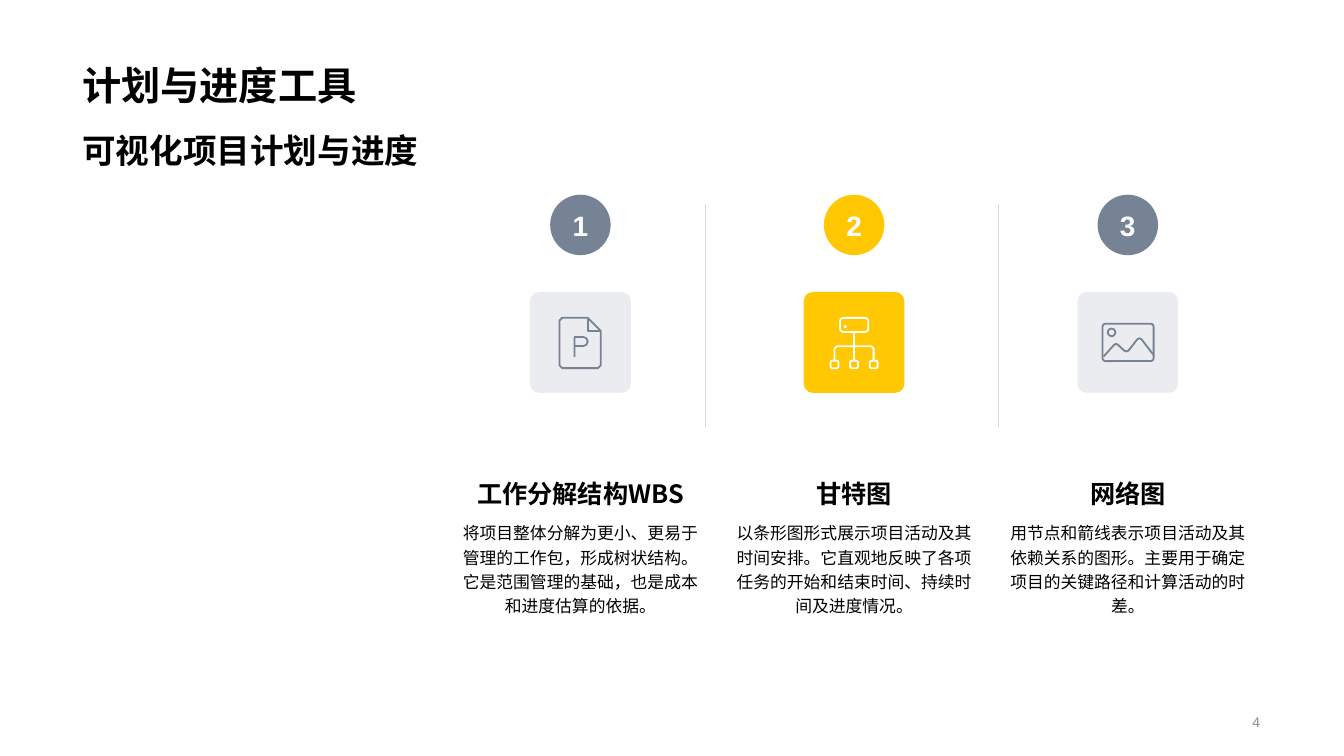
from lxml import etree
from pptx import Presentation
from pptx.dml.color import RGBColor
from pptx.enum import shapes, text
from pptx.oxml.ns import qn
from pptx.util import Pt

CJK, LATIN = "Noto Sans CJK SC", "Arial"
BLACK, WHITE, SLATE, YELLOW = "000000", "FFFFFF", "768394", "FFC803"
SHAPE, ANCHOR, ALIGN = shapes.MSO_SHAPE, text.MSO_ANCHOR, text.PP_ALIGN


def color(value):
    return RGBColor.from_string(value)


class Deck:
    """Current slide and its style; all lengths are points."""

    icon_line = 1.3

    def __init__(self, width, height):
        self.prs = Presentation()
        self.prs.slide_width, self.prs.slide_height = Pt(width), Pt(height)
        self.s = self.prs.slides.add_slide(self.prs.slide_layouts[6])

    def label(self, sp, content, size, c=BLACK, bold=False, font=CJK,
              align=ALIGN.LEFT, anchor=ANCHOR.TOP, spacing=None, wrap=True):
        """Fill a shape with one styled paragraph."""
        tf = sp.text_frame
        tf.word_wrap, tf.vertical_anchor = wrap, anchor
        p = tf.paragraphs[0]
        p.text, p.alignment = content, align
        if spacing:
            p.line_spacing = Pt(spacing * size)
        p.font.name, p.font.size, p.font.bold = font, Pt(size), bold
        p.font.color.rgb = color(c)
        ea = etree.SubElement(p._p.pPr.find(qn("a:defRPr")), qn("a:ea"))
        ea.set("typeface", font)

    def text(self, content, x, y, w, h, size, **style):
        sp = self.s.shapes.add_textbox(Pt(x), Pt(y), Pt(w), Pt(h))
        self.label(sp, content, size, **style)

    def paint(self, sp, fill=None, line=None, alpha=None):
        sp.shadow.inherit = False
        if fill:
            sp.fill.solid()
            sp.fill.fore_color.rgb = color(fill)
        else:
            sp.fill.background()
        if alpha:
            clr = sp._element.spPr.find(qn("a:solidFill"))[0]
            etree.SubElement(clr, qn("a:alpha")).set("val", str(alpha * 1000))
        if line:
            sp.line.color.rgb, sp.line.width = color(line), Pt(self.icon_line)
        else:
            sp.line.fill.background()

    def shape(self, kind, cx, cy, w, h, radius=None, **look):
        """Preset shape placed by its centre."""
        sp = self.s.shapes.add_shape(kind, Pt(cx - w / 2), Pt(cy - h / 2), Pt(w), Pt(h))
        if radius is not None:
            sp.adjustments[0] = radius
        self.paint(sp, **look)
        return sp

    def stroke(self, cx, cy, points, c, close=False):
        """Unfilled outline through points given from a centre."""
        pts = [(Pt(cx + x), Pt(cy + y)) for x, y in points]
        fb = self.s.shapes.build_freeform(*pts[0])
        fb.add_line_segments(pts[1:], close=close)
        self.paint(fb.convert_to_shape(), line=c)

    def divider(self, x, top, bottom):
        ln = self.s.shapes.add_connector(
            shapes.MSO_CONNECTOR.STRAIGHT, Pt(x), Pt(top), Pt(x), Pt(bottom))
        ln.line.color.rgb, ln.line.width = color("D9D9D9"), Pt(0.25)
        etree.SubElement(ln._element.spPr, qn("a:effectLst"))


def document_icon(d, cx, cy, c):
    page = [(-13, -17.6), (5.2, -17.6), (14.5, -8.2), (14.5, 16.4), (12.5, 18.4),
            (-13, 18.4), (-15, 16.4), (-15, -15.6)]
    fold = [(5.2, -17.6), (5.2, -8.2), (14.5, -8.2)]
    letter = [(-4.2, 10.5), (-4.2, -3.9), (2, -3.9), (4.3, -2.9), (5.2, -0.6),
              (4.3, 1.7), (2, 2.6), (-4.2, 2.6)]
    d.stroke(cx, cy, page, c, close=True)
    d.stroke(cx, cy, fold, c)
    d.stroke(cx, cy, letter, c)


def tree_icon(d, cx, cy, c):
    d.shape(SHAPE.ROUNDED_RECTANGLE, cx, cy - 12.5, 20.2, 10.1, radius=0.25, line=c)
    d.shape(SHAPE.OVAL, cx - 6.3, cy - 11.3, 2, 2, fill=c)
    d.stroke(cx, cy, [(0, -7.5), (0, 13)], c)
    d.stroke(cx, cy, [(-14, 13), (-14, 4.5), (-12.4, 2.8), (12.4, 2.8),
                      (14, 4.5), (14, 13)], c)
    for dx in (-14, 0, 14):
        d.shape(SHAPE.ROUNDED_RECTANGLE, cx + dx, cy + 15.7, 5.6, 5.4,
                radius=0.25, line=c)


def landscape_icon(d, cx, cy, c):
    ridge = [(-17.3, 10.1), (-9.8, 1.8), (-8.3, 1), (-6.9, 1.8), (-2.6, 5.8),
             (-1, 6.5), (0.6, 5.8), (6.7, -2.1), (8.3, -3), (9.9, -2.1), (18.2, 8.7)]
    d.shape(SHAPE.ROUNDED_RECTANGLE, cx + 0.2, cy, 36.5, 26.7, radius=0.08, line=c)
    d.shape(SHAPE.OVAL, cx - 11.6, cy - 7.2, 5.4, 5.4, line=c)
    d.stroke(cx, cy, ridge, c)


TOOLS = [
    ("工作分解结构WBS", "将项目整体分解为更小、更易于管理的工作包，形成树状结构。"
     "它是范围管理的基础，也是成本和进度估算的依据。", document_icon),
    ("甘特图", "以条形图形式展示项目活动及其时间安排。"
     "它直观地反映了各项任务的开始和结束时间、持续时间及进度情况。", tree_icon),
    ("网络图", "用节点和箭线表示项目活动及其依赖关系的图形。"
     "主要用于确定项目的关键路径和计算活动的时差。", landscape_icon),
]


def main():
    d = Deck(960, 540)
    d.text("计划与进度工具", 51.8, 10.1, 855.4, 70.6, 28, bold=True,
           anchor=ANCHOR.BOTTOM, spacing=1.2)
    d.text("可视化项目计划与进度", 51.8, 89.3, 275.8, 169.9, 24, bold=True, spacing=1.2)
    for x in (504, 712.8):
        d.divider(x, 145.4, 305.3)

    first_center, pitch, text_w, tile_y = 414.6, 195.5, 185.8, 244.6
    for i, (name, detail, icon) in enumerate(TOOLS):
        cx = first_center + i * pitch
        left = cx - text_w / 2
        accent = i == 1
        main_color = YELLOW if accent else SLATE
        d.text(detail, left, 367.2, text_w, 94.3, 12, align=ALIGN.CENTER, spacing=1.44)
        d.text(name, left, 307, text_w, 59.8, 18, bold=True, align=ALIGN.CENTER,
               anchor=ANCHOR.BOTTOM, spacing=1.2)
        badge = d.shape(SHAPE.OVAL, cx, 160.7, 43.2, 43.2, fill=main_color)
        d.label(badge, str(i + 1), 20, c=WHITE, bold=True, font=LATIN,
                align=ALIGN.CENTER, anchor=ANCHOR.MIDDLE, wrap=False)
        d.shape(SHAPE.ROUNDED_RECTANGLE, cx, tile_y, 72, 72, radius=0.09,
                fill=main_color, alpha=None if accent else 15)
        icon(d, cx, tile_y, WHITE if accent else SLATE)

    d.text("4", 619.2, 504.7, 288, 21.6, 10, c="8C8C8C", font=LATIN,
           align=ALIGN.RIGHT, anchor=ANCHOR.MIDDLE)
    d.prs.save("out.pptx")


if __name__ == "__main__":
    main()
